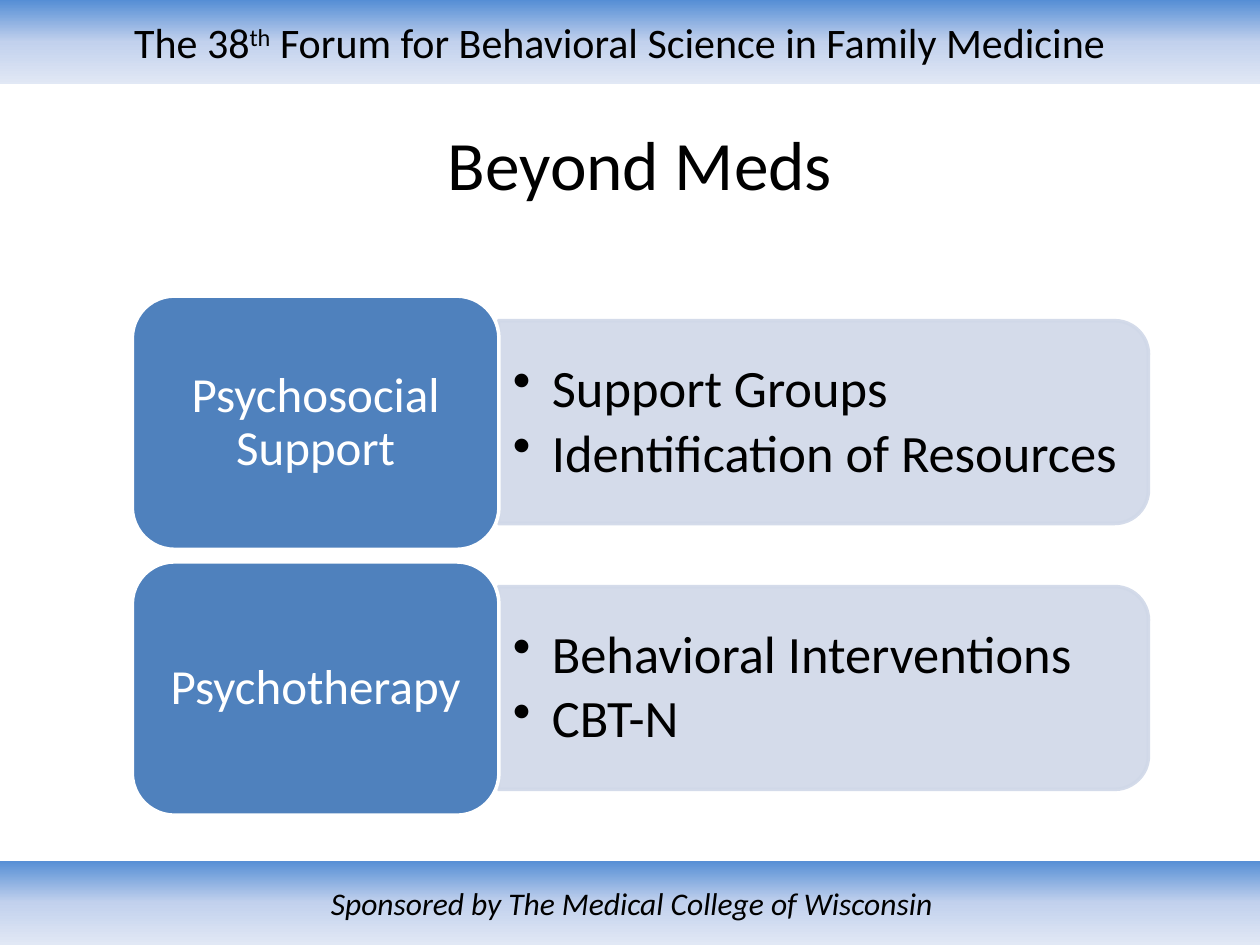
import pptx
import pptx.util
import pptx.oxml
import pptx.oxml.ns
import pptx.dml.color
import pptx.enum.shapes
import pptx.enum.text

Inches, Pt = pptx.util.Inches, pptx.util.Pt
Kind = pptx.enum.shapes.MSO_SHAPE
Align = pptx.enum.text.PP_ALIGN
qn = pptx.oxml.ns.qn
NS = pptx.oxml.ns.nsdecls("a")

HUES = {"ink": "000000", "white": "FFFFFF", "blue": "4F81BD", "pale": "D0D8E8"}
FADE = {0: "558ED5", 50: "C2D1ED", 100: "E1E8F5"}


def rgb(name):
    return pptx.dml.color.RGBColor.from_string(HUES[name])


def write(shape, lines, size, hue="ink", pad=(0.1, 0.05, 0.1, 0.05),
          look=None, bullet=False, **font):
    """Fill a shape with paragraphs; each line is a list of runs."""
    frame = shape.text_frame
    box = {"word_wrap": True, "vertical_anchor": pptx.enum.text.MSO_ANCHOR.MIDDLE}
    sides = ("margin_left", "margin_top", "margin_right", "margin_bottom")
    box.update(zip(sides, map(Inches, pad)))
    for key, val in box.items():
        setattr(frame, key, val)
    for i, runs in enumerate(lines):
        para = frame.add_paragraph() if i else frame.paragraphs[0]
        for key, val in {"alignment": Align.CENTER, **(look or {})}.items():
            setattr(para, key, val)
        if bullet:
            props = para._p.get_or_add_pPr()
            props.set("marL", str(Inches(0.31)))
            props.set("indent", str(-Inches(0.31)))
            props.append(pptx.oxml.parse_xml(f'<a:buChar {NS} char="•"/>'))
        for text in runs:
            run = para.add_run()
            run.text = text
            for key, val in {"name": "Calibri", "size": Pt(size), **font}.items():
                setattr(run.font, key, val)
            run.font.color.rgb = rgb(hue)


deck = pptx.Presentation()
deck.slide_width, deck.slide_height = Inches(10), Inches(7.5)
slide = deck.slides.add_slide(deck.slide_layouts[6])
shapes = slide.shapes

# Header and footer bands
bands = []
for top, width in ((0, 10), (6.83, 10.03)):
    band = shapes.add_shape(Kind.RECTANGLE, 0, Inches(top), Inches(width), Inches(0.67))
    band.shadow.inherit = False
    band.line.fill.background()
    band.fill.gradient()
    grad = band._element.spPr.find(qn("a:gradFill"))
    stops = "".join(f'<a:gs pos="{pos * 1000}"><a:srgbClr val="{hue}"/></a:gs>'
                    for pos, hue in FADE.items())
    grad.replace(grad.find(qn("a:gsLst")),
                 pptx.oxml.parse_xml(f"<a:gsLst {NS}>{stops}</a:gsLst>"))
    band.fill.gradient_angle = 270
    bands.append(band)

head, foot = bands
write(head, [["The 38", "th", " Forum for Behavioral Science in Family Medicine"]],
      24, pad=(0.1, 0.05, 0.26, 0.05))
head.text_frame.paragraphs[0].runs[1].font._element.set("baseline", "30000")
write(foot, [["Sponsored by The Medical College of Wisconsin"]], 18, italic=True)

# Title
title = shapes.add_textbox(Inches(0.58), Inches(0.92), Inches(9), Inches(0.75))
write(title, [["Beyond Meds"]], 39.6)

# Rows: pale panel with bullets, blue label
rows = {
    "Psychosocial Support": ["Support Groups", "Identification of Resources"],
    "Psychotherapy": ["Behavioral Interventions", "CBT-N"],
}
PAD = (0.12, 0.06, 0.12, 0.06)
for i, (label, items) in enumerate(rows.items()):
    top = 2.35 + 2.11 * i
    panel = shapes.add_shape(Kind.ROUND_2_SAME_RECTANGLE, Inches(5.73),
                             Inches(top - 1.58), Inches(1.61), Inches(5.16))
    panel.rotation = 90
    notes = shapes.add_textbox(Inches(3.95), Inches(top + 0.28), Inches(5.09), Inches(1.45))
    write(notes, [[item] for item in items], 30, pad=PAD, bullet=True,
          look={"alignment": Align.LEFT, "level": 1, "line_spacing": 0.9,
                "space_after": Pt(4.5)})
    block = shapes.add_shape(Kind.ROUNDED_RECTANGLE, Inches(1.05), Inches(top),
                             Inches(2.91), Inches(2.01))
    write(block, [[label]], 28, "white", PAD, {"line_spacing": 0.9})
    for shape, fill, edge in ((panel, "pale", "pale"), (block, "blue", "white")):
        shape.shadow.inherit = False
        shape.fill.solid()
        shape.fill.fore_color.rgb = rgb(fill)
        shape.line.color.rgb = rgb(edge)
        shape.line.width = Pt(2)
    # Panel fill and line are 90% opaque
    for tone in panel._element.spPr.iter(qn("a:srgbClr")):
        tone.append(pptx.oxml.parse_xml(f'<a:alpha {NS} val="90000"/>'))

deck.save("out.pptx")
